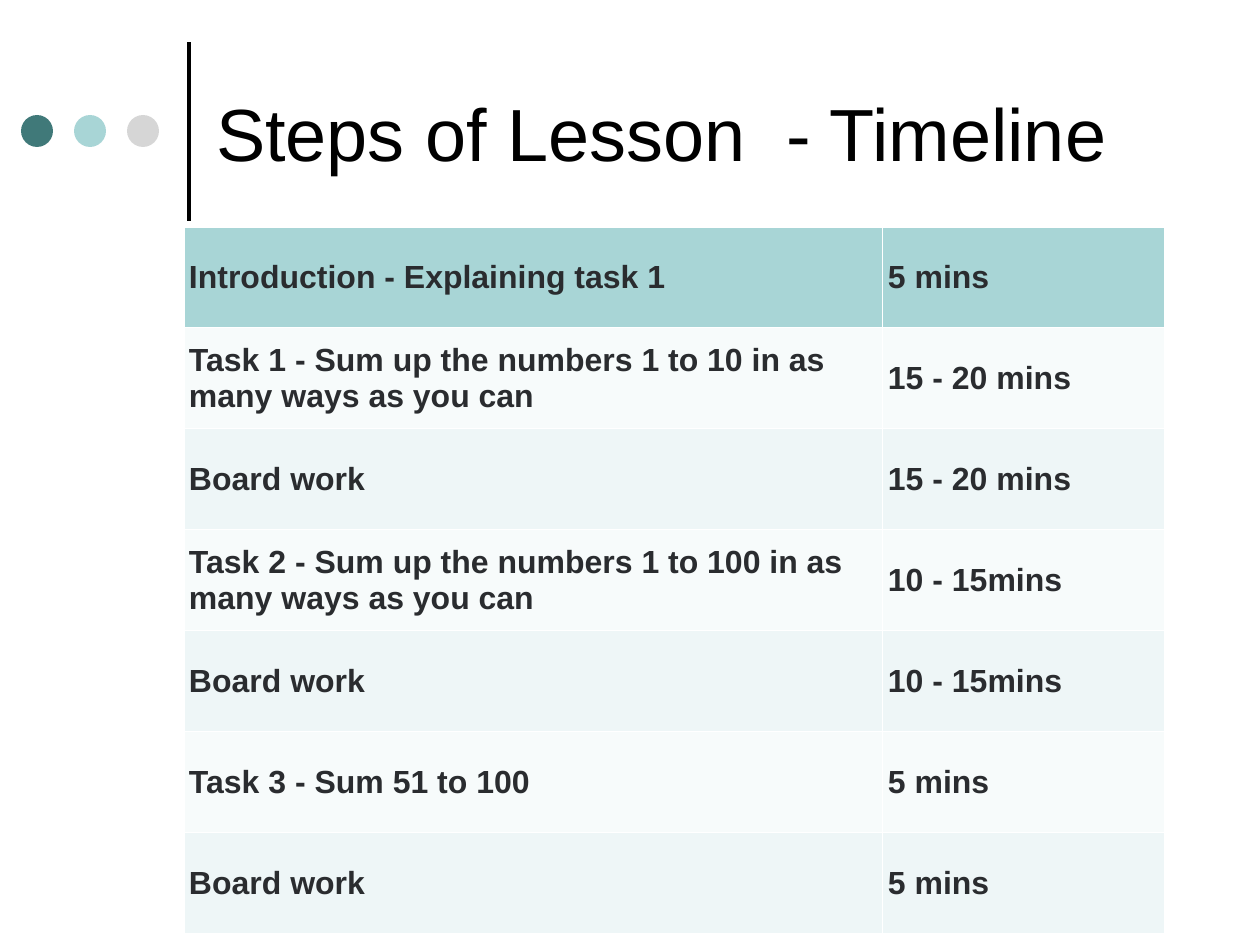
"""Build the lesson timeline slide: title, divider, accent dots and schedule table."""
from dataclasses import dataclass

from lxml.etree import SubElement
from pptx import Presentation
from pptx.dml.color import RGBColor
from pptx.enum.shapes import MSO_CONNECTOR, MSO_SHAPE
from pptx.enum.text import MSO_ANCHOR, MSO_AUTO_SIZE, PP_ALIGN
from pptx.oxml import parse_xml
from pptx.oxml.ns import nsdecls, qn
from pptx.util import Pt

TITLE = "Steps of Lesson  - Timeline"
STEPS = [
    ("Introduction - Explaining task 1", "5 mins"),
    ("Task 1 - Sum up the numbers 1 to 10 in as many ways as you can", "15 - 20 mins"),
    ("Board work", "15 - 20 mins"),
    ("Task 2 - Sum up the numbers 1 to 100 in as many ways as you can", "10 - 15mins"),
    ("Board work", "10 - 15mins"),
    ("Task 3 - Sum 51 to 100", "5 mins"),
    ("Board work", "5 mins"),
]


@dataclass(frozen=True)
class Theme:
    """Colours, font and type sizes of the slide."""

    font: str = "Arial"
    title_size: int = 60
    step_size: int = 26
    black: str = "000000"
    ink: str = "2A2C2F"
    border: str = "FFFFFF"
    header: str = "A8D5D6"
    bands: tuple = ("EEF6F7", "F7FBFB")
    dots: tuple = ("407979", "A8D5D6", "D6D6D6")


THEME = Theme()
EMU_PER_PX = 10321
SLIDE_SIZE = (1260, 945)
TITLE_BOX = (210, 1, 966, 262)
DIVIDER = (189, 221, 189, 42)
DOT_LEFT, DOT_TOP, DOT_SIZE, DOT_STEP = 21, 115, 32, 53
TABLE_LEFT, TABLE_TOP, ROW_HEIGHT = 184, 227, 101
COLUMN_WIDTHS = (699, 282)
TITLE_INSET, CELL_INSET = 6, 5


def px(*lengths):
    """Turn px lengths into EMU."""
    return [length * EMU_PER_PX for length in lengths]


def apply_format(target, values):
    """Set each attribute named in values."""
    for attribute, value in values.items():
        setattr(target, attribute, value)


def margins(inset):
    """Give equal margins on all four sides."""
    return {f"margin_{side}": inset * EMU_PER_PX for side in ("left", "right", "top", "bottom")}


def paint(fill, colour):
    """Apply a solid fill."""
    fill.solid()
    fill.fore_color.rgb = RGBColor.from_string(colour)


def style_text(paragraph, size, colour, bold):
    """Set the font of a paragraph and align it left."""
    paragraph.alignment = PP_ALIGN.LEFT
    for run in paragraph.runs:
        apply_format(run.font, {"name": THEME.font, "size": Pt(size), "bold": bold})
        run.font.color.rgb = RGBColor.from_string(colour)


def add_title(slide):
    """Place and format the title."""
    title = slide.shapes.title
    apply_format(title, dict(zip(("left", "top", "width", "height"), px(*TITLE_BOX))))
    frame = title.text_frame
    frame.text = TITLE
    apply_format(frame, {
        "word_wrap": True,
        "auto_size": MSO_AUTO_SIZE.NONE,
        "vertical_anchor": MSO_ANCHOR.MIDDLE,
        **margins(TITLE_INSET),
    })
    style_text(frame.paragraphs[0], THEME.title_size, THEME.black, False)


def add_accents(slide):
    """Draw the divider and the row of dots."""
    divider = slide.shapes.add_connector(MSO_CONNECTOR.STRAIGHT, *px(*DIVIDER))
    divider.line.width = Pt(3)
    divider.line.color.rgb = RGBColor.from_string(THEME.black)
    SubElement(divider._element.spPr, qn("a:effectLst"))
    for index, colour in enumerate(THEME.dots):
        place = px(DOT_LEFT + index * DOT_STEP, DOT_TOP, DOT_SIZE, DOT_SIZE)
        dot = slide.shapes.add_shape(MSO_SHAPE.OVAL, *place)
        dot.shadow.inherit = False
        paint(dot.fill, colour)
        dot.line.fill.background()


def add_borders(cell):
    """Give a cell thin borders, which precede its fill in the XML."""
    properties = cell._tc.get_or_add_tcPr()
    for position, side in enumerate("LRTB"):
        properties.insert(position, parse_xml(
            f'<a:ln{side} {nsdecls("a")} w="{Pt(1)}"><a:solidFill>'
            f'<a:srgbClr val="{THEME.border}"/></a:solidFill></a:ln{side}>'
        ))


def add_schedule(slide):
    """Build the table of steps and durations."""
    place = px(TABLE_LEFT, TABLE_TOP, sum(COLUMN_WIDTHS), ROW_HEIGHT * len(STEPS))
    schedule = slide.shapes.add_table(len(STEPS), len(COLUMN_WIDTHS), *place).table
    for column, width in zip(schedule.columns, px(*COLUMN_WIDTHS)):
        column.width = width
    for row, step in enumerate(STEPS):
        schedule.rows[row].height = ROW_HEIGHT * EMU_PER_PX
        band = THEME.bands[row % 2] if row else THEME.header
        for column, words in enumerate(step):
            cell = schedule.cell(row, column)
            cell.text = words
            apply_format(cell, {"vertical_anchor": MSO_ANCHOR.MIDDLE, **margins(CELL_INSET)})
            paint(cell.fill, band)
            add_borders(cell)
            style_text(cell.text_frame.paragraphs[0], THEME.step_size, THEME.ink, True)


def main():
    """Assemble and save the slide."""
    deck = Presentation()
    apply_format(deck, dict(zip(("slide_width", "slide_height"), px(*SLIDE_SIZE))))
    slide = deck.slides.add_slide(deck.slide_layouts.get_by_name("Title Only"))
    add_title(slide)
    add_accents(slide)
    add_schedule(slide)
    deck.save("out.pptx")


if __name__ == "__main__":
    main()
